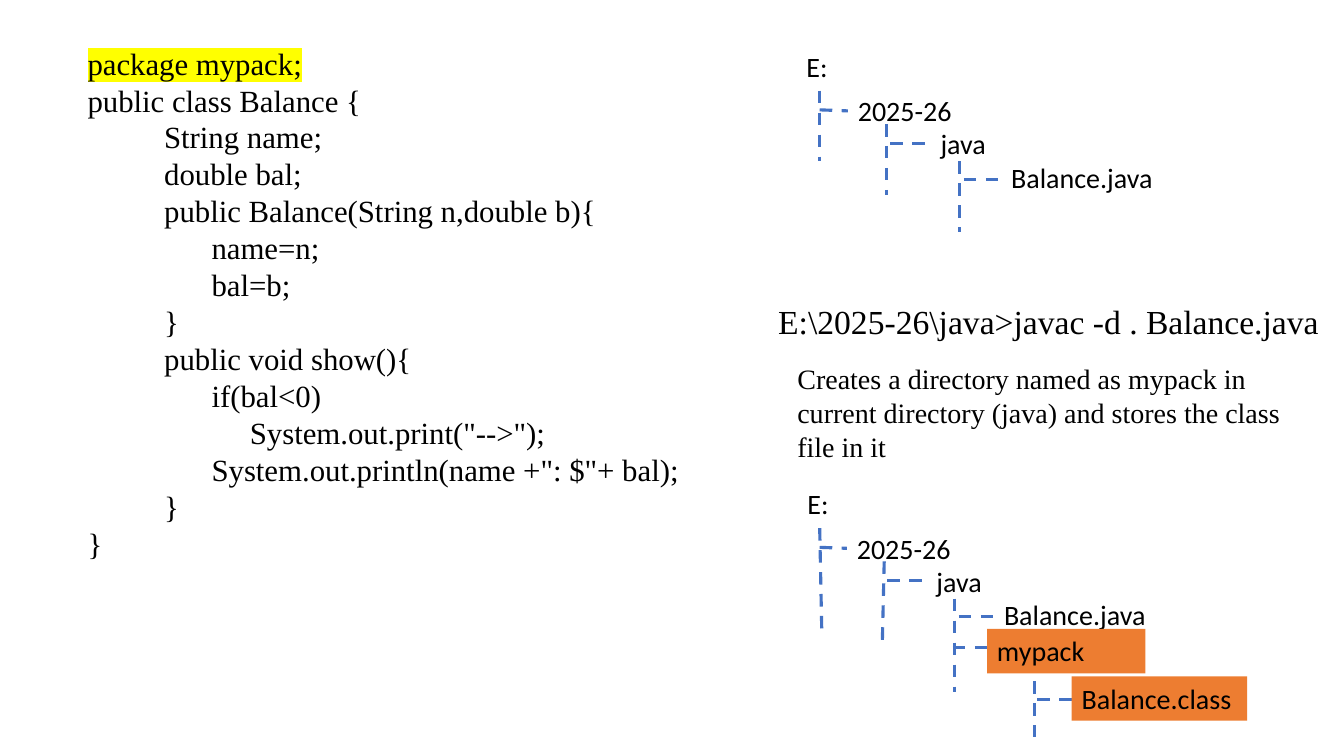
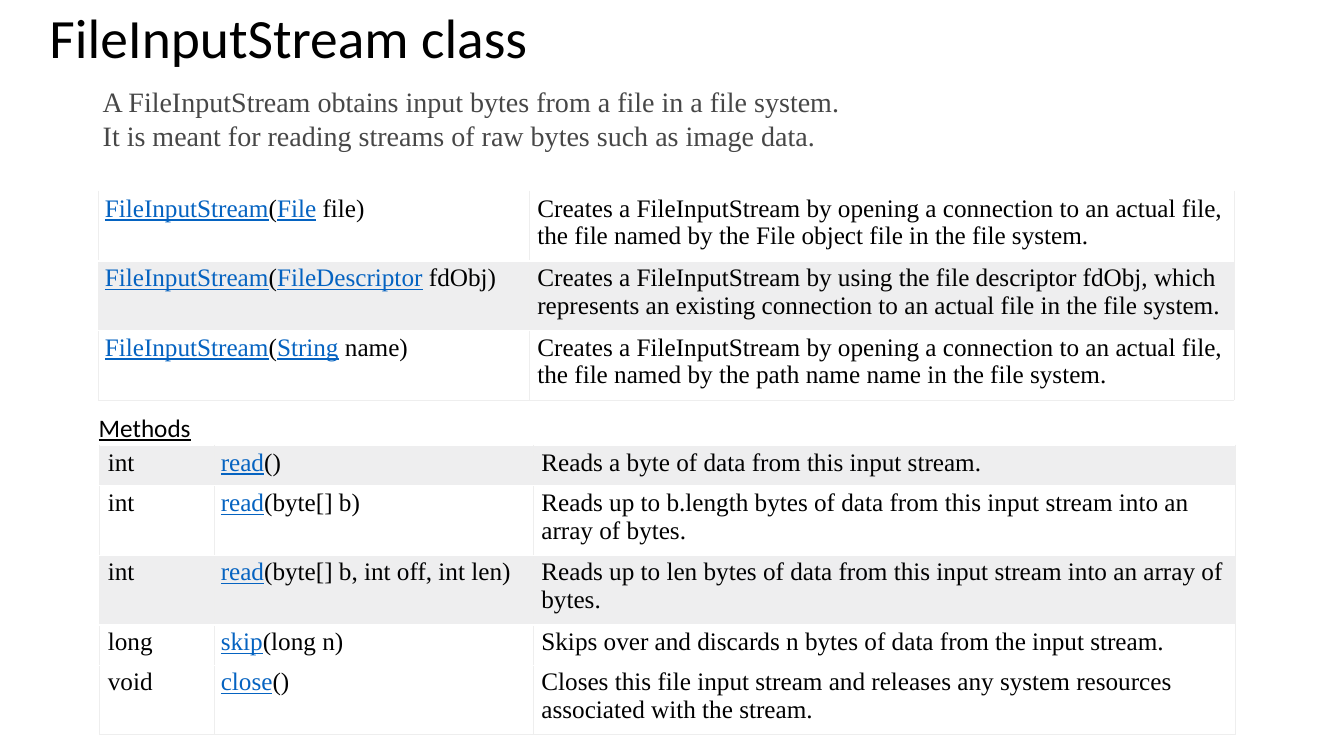
from lxml import etree
from pptx import Presentation
from pptx.dml.color import RGBColor
from pptx.enum.dml import MSO_LINE
from pptx.enum.shapes import MSO_CONNECTOR, MSO_SHAPE
from pptx.enum.text import MSO_ANCHOR, MSO_AUTO_SIZE, PP_ALIGN
from pptx.oxml.ns import qn
from pptx.util import Inches, Pt

STRAIGHT = MSO_CONNECTOR.STRAIGHT
RECT = MSO_SHAPE.RECTANGLE
DASH = MSO_LINE.DASH
LEFT = PP_ALIGN.LEFT
TOP, MIDDLE = MSO_ANCHOR.TOP, MSO_ANCHOR.MIDDLE
NO_AUTOFIT = MSO_AUTO_SIZE.NONE
TITLE_ONLY, BLANK = 5, 6

SANS, SERIF = "Calibri", "Times New Roman"
COLORS = {
    "text": "000000", "intro": "474747", "link": "0563C1", "branch": "4472C4",
    "new": "ED7D31", "marker": "FFFF00", "white": "FFFFFF",
    "band": "EEEEEF", "border": "EEEEEE",
}

# (indent level, code line)
CODE_INDENTS = [0, 0.76, 1.23, 1.61]
CODE = [
    (0, "package mypack;"),
    (0, "public class Balance {"),
    (1, "String name;"),
    (1, "double bal;"),
    (1, "public Balance(String n,double b){"),
    (2, "name=n;"),
    (2, "bal=b;"),
    (1, "}"),
    (1, "public void show(){"),
    (2, "if(bal<0)"),
    (3, 'System.out.print("-->");'),
    (2, 'System.out.println(name +": $"+ bal);'),
    (1, "}"),
    (0, "}"),
]
COMMAND = "E:\\2025-26\\java>javac -d . Balance.java"
EFFECT = ("Creates a directory named as mypack in current directory (java) "
          "and stores the class file in it")

# names: (text, left, top, width, fill); lines: (x1, y1, x2, y2)
TREE_BEFORE = {
    "names": [
        ("E:", 7.9, 0.44, 0.46, None),
        ("2025-26", 8.41, 0.88, 1.28, None),
        ("java", 9.23, 1.21, 1.28, None),
        ("Balance.java", 9.93, 1.54, 1.72, None),
    ],
    "lines": [
        (8.13, 0.9, 8.13, 1.6), (8.13, 1.09, 8.41, 1.1),
        (8.79, 1.23, 8.79, 1.93), (8.83, 1.42, 9.2, 1.42),
        (9.52, 1.6, 9.52, 2.3), (9.56, 1.78, 9.93, 1.78),
    ],
}
TREE_AFTER = {
    "names": [
        ("E:", 7.91, 4.78, 0.44, None),
        ("2025-26", 8.4, 5.22, 1.23, None),
        ("java", 9.19, 5.55, 1.23, None),
        ("Balance.java", 9.86, 5.88, 1.66, None),
        ("Balance.class", 10.63, 6.71, 1.74, "new"),
        ("mypack", 9.79, 6.24, 1.57, "new"),
    ],
    "lines": [
        (8.13, 5.24, 8.15, 6.24), (8.13, 5.43, 8.4, 5.44),
        (8.77, 5.57, 8.75, 6.42), (8.8, 5.76, 9.16, 5.76),
        (9.47, 5.94, 9.47, 6.87), (9.51, 6.12, 9.86, 6.12),
        (10.26, 6.54, 10.26, 7.31), (10.29, 6.94, 10.63, 6.94),
        (9.45, 6.42, 9.79, 6.42),
    ],
}

INTRO = [
    "A FileInputStream obtains input bytes from a file in a file system.",
    "It is meant for reading streams of raw bytes such as image data.",
]
# A signature is a tuple of linked and plain parts in turn.
CONSTRUCTORS = [
    (("FileInputStream", "(", "File", " file)"),
     "Creates a FileInputStream by opening a connection to an actual file, "
     "the file named by the File object file in the file system."),
    (("FileInputStream", "(", "FileDescriptor", " fdObj)"),
     "Creates a FileInputStream by using the file descriptor fdObj, which "
     "represents an existing connection to an actual file in the file system."),
    (("FileInputStream", "(", "String", " name)"),
     "Creates a FileInputStream by opening a connection to an actual file, "
     "the file named by the path name name in the file system."),
]
METHODS = [
    ("int", ("read", "()"), "Reads a byte of data from this input stream."),
    ("int", ("read", "(byte[] b)"),
     "Reads up to b.length bytes of data from this input stream into an array of bytes."),
    ("int", ("read", "(byte[] b, int off, int len)"),
     "Reads up to len bytes of data from this input stream into an array of bytes."),
    ("long", ("skip", "(long n)"),
     "Skips over and discards n bytes of data from the input stream."),
    ("void", ("close", "()"),
     "Closes this file input stream and releases any system resources "
     "associated with the stream."),
]
ONE_LINE, TWO_LINES = 0.4, 0.69  # row heights


def rgb(name):
    return RGBColor.from_string(COLORS[name])


def write(p, text, size=18, font=SERIF, color="text", underline=False, highlight=None):
    """Add a formatted run to a paragraph."""
    r = p.add_run()
    r.text = text
    r.font.size, r.font.name = Pt(size), font
    r.font.color.rgb = rgb(color)
    if underline:
        r.font.underline = True
    if highlight:
        mark = etree.Element(qn("a:highlight"))
        etree.SubElement(mark, qn("a:srgbClr")).set("val", COLORS[highlight])
        r.font._element.find(qn("a:solidFill")).addnext(mark)


def paragraphs(tf, count):
    """Return the frame's paragraphs, extended to count."""
    while len(tf.paragraphs) < count:
        tf.add_paragraph()
    return tf.paragraphs


def add_text(shapes, lines, left, top, width, height, **fmt):
    tf = shapes.add_textbox(*map(Inches, (left, top, width, height))).text_frame
    tf.word_wrap = True
    for p, line in zip(paragraphs(tf, len(lines)), lines):
        write(p, line, **fmt)
    return tf


def add_code(shapes):
    tf = add_text(shapes, [], 0.77, 0.39, 6.67, 5.28)
    for p, (level, line) in zip(paragraphs(tf, len(CODE)), CODE):
        pPr = p._p.get_or_add_pPr()
        pPr.set("marL", str(Inches(CODE_INDENTS[level])))
        pPr.set("indent", "0")
        write(p, line, size=22, highlight="marker" if line.startswith("package") else None)


def add_tree(slide, names, lines):
    """Draw a directory tree as one group."""
    shapes = slide.shapes.add_group_shape().shapes
    for x1, y1, x2, y2 in lines:
        branch = shapes.add_connector(STRAIGHT, *map(Inches, (x1, y1, x2, y2)))
        branch.line.color.rgb = rgb("branch")
        branch.line.width = Pt(2.25)
        branch.line.dash_style = DASH
        etree.SubElement(branch._element.spPr, qn("a:effectLst"))
    for text, left, top, width, fill in names:
        if not fill:
            add_text(shapes, [text], left, top, width, 0.44, size=20, font=SANS)
            continue
        sp = shapes.add_shape(RECT, *map(Inches, (left, top, width, 0.44)))
        sp.shadow.inherit = False
        sp.fill.solid()
        sp.fill.fore_color.rgb = rgb(fill)
        sp.line.fill.background()
        tf = sp.text_frame
        tf.word_wrap, tf.vertical_anchor = True, TOP
        tf.paragraphs[0].alignment = LEFT
        write(tf.paragraphs[0], text, size=20, font=SANS)


def set_borders(cell):
    tcPr = cell._tc.get_or_add_tcPr()
    for i, side in enumerate(("a:lnL", "a:lnR", "a:lnB")):
        ln = etree.Element(qn(side), w=str(Pt(0.6)))
        fill = etree.SubElement(ln, qn("a:solidFill"))
        etree.SubElement(fill, qn("a:srgbClr")).set("val", COLORS["border"])
        tcPr.insert(i, ln)


def add_api_table(slide, rows, left, top, widths, heights, banded):
    """Add a reference table; banded holds the indices of the grey rows."""
    frame = slide.shapes.add_table(
        len(rows), len(widths), Inches(left), Inches(top),
        Inches(sum(widths)), Inches(sum(heights)))
    table = frame.table
    table.first_row = table.horz_banding = False
    for column, width in zip(table.columns, widths):
        column.width = Inches(width)
    for i, (row, height) in enumerate(zip(rows, heights)):
        table.rows[i].height = Inches(height)
        for j, content in enumerate(row):
            cell = table.cell(i, j)
            is_signature = isinstance(content, tuple)
            cell.margin_left = Inches(0.06 if is_signature else 0.08)
            cell.margin_right, cell.margin_top, cell.margin_bottom = map(
                Inches, (0.07, 0.03, 0.03))
            cell.fill.solid()
            cell.fill.fore_color.rgb = rgb("band" if i in banded else "white")
            set_borders(cell)
            p = cell.text_frame.paragraphs[0]
            for k, part in enumerate(content if is_signature else [content]):
                linked = is_signature and k % 2 == 0
                write(p, part, color="link" if linked else "text", underline=linked)
            if j == len(row) - 1:
                p.space_before, p.space_after = Pt(2.2), Pt(1.5)


def add_title(slide, text):
    title = slide.shapes.title
    title.left, title.top, title.width, title.height = map(Inches, (0.39, 0.08, 11.5, 0.65))
    tf = title.text_frame
    tf.auto_size, tf.vertical_anchor = NO_AUTOFIT, MIDDLE
    p = tf.paragraphs[0]
    p.alignment, p.line_spacing = LEFT, 0.9
    write(p, text, size=39.6, font=SANS)


def build_package_slide(prs):
    slide = prs.slides.add_slide(prs.slide_layouts[BLANK])
    add_code(slide.shapes)
    add_tree(slide, **TREE_BEFORE)
    add_text(slide.shapes, [COMMAND], 7.62, 2.94, 5.71, 0.5, size=24)
    add_text(slide.shapes, [EFFECT], 7.81, 3.54, 5.33, 1.11, size=20)
    add_tree(slide, **TREE_AFTER)


def build_stream_slide(prs):
    slide = prs.slides.add_slide(prs.slide_layouts[TITLE_ONLY])
    add_title(slide, "FileInputStream class")
    add_text(slide.shapes, INTRO, 0.92, 0.79, 9.49, 0.77, size=20, color="intro")
    add_api_table(slide, CONSTRUCTORS, 0.98, 1.9, [4.27, 6.99], [TWO_LINES] * 3, banded={1})
    add_text(slide.shapes, ["Methods"], 0.88, 4.04, 1.72, 0.4, font=SANS, underline=True)
    add_api_table(slide, METHODS, 0.99, 4.42, [1.14, 3.16, 6.96],
                  [ONE_LINE, TWO_LINES, TWO_LINES, ONE_LINE, TWO_LINES], banded={0, 2})


def main():
    prs = Presentation()
    prs.slide_width, prs.slide_height = Inches(13.33), Inches(7.5)
    build_package_slide(prs)
    build_stream_slide(prs)
    prs.save("out.pptx")


if __name__ == "__main__":
    main()
